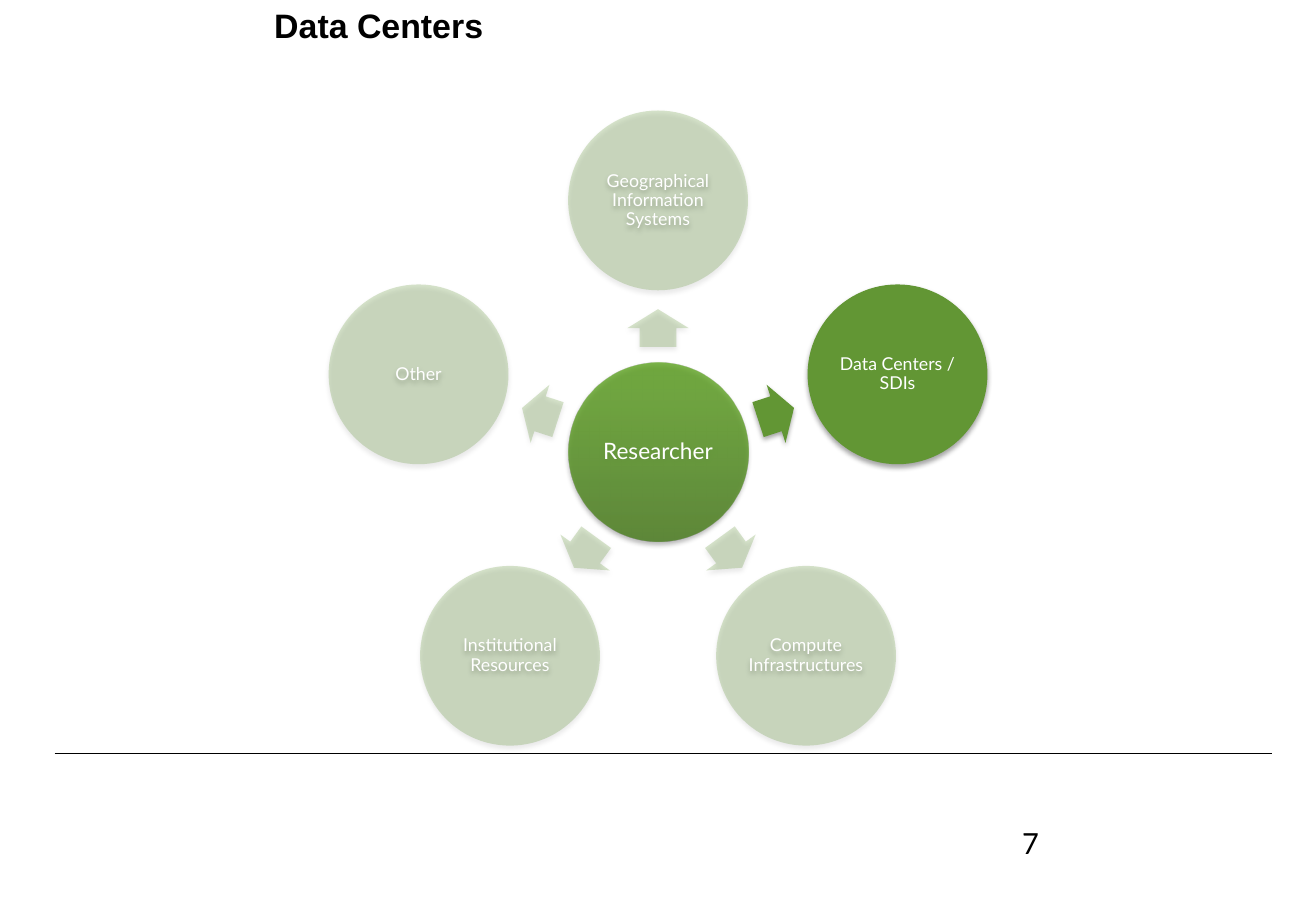
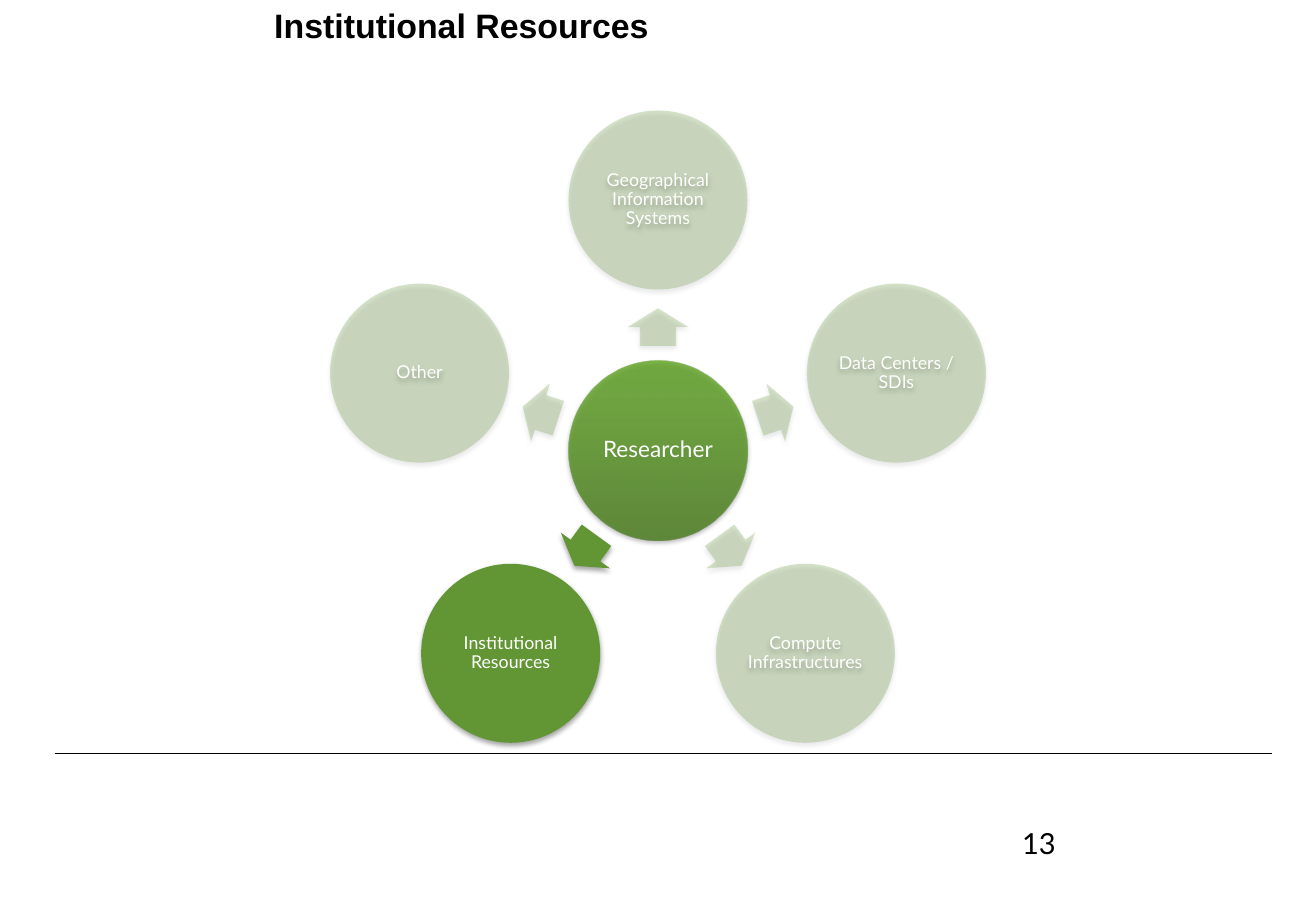
import math

from lxml import etree
from pptx import Presentation
from pptx import util as u
from pptx.dml.color import RGBColor
from pptx.enum import shapes, text
from pptx.oxml.ns import qn

COLORS = {
    "black": "000000", "white": "FFFFFF", "green": "629634",
    "hub dark": "487B1C", "hub mid": "5EA024", "hub light": "5EA322",
}
TOPICS = ["Geographical Information Systems", "Data Centers / SDIs",
          "Compute Infrastructures", "Institutional Resources", "Other"]
# title, page number, highlighted topic, circle diameter in points
PAGES = [
    ("Data Centers", "7", "Data Centers / SDIs", 111.5),
    ("Institutional Resources", "13", "Institutional Resources", 111),
]
CENTER_X, DIAGRAM_TOP = 407.9, 68.5
HUB_STOPS = [(0, "hub dark"), (80, "hub mid"), (100, "hub light")]


def write_text(shape, words, size, font="Lato", color="black", bold=False, align=None,
               anchor=text.MSO_ANCHOR.TOP, spacing=None, inset=(0, 0)):
    """Put one paragraph in a shape; inset is (horizontal, vertical) in points."""
    frame = shape.text_frame
    frame.word_wrap = True
    frame.vertical_anchor = anchor
    frame.margin_left = frame.margin_right = u.Pt(inset[0])
    frame.margin_top = frame.margin_bottom = u.Pt(inset[1])
    para = frame.paragraphs[0]
    para.alignment = align
    para.line_spacing = spacing
    span = para.add_run()
    span.text = words
    span.font.name, span.font.size, span.font.bold = font, u.Pt(size), bold
    span.font.color.rgb = RGBColor.from_string(COLORS[color])


def add_part(group, kind, x, y, width, height, opacity=100, stops=None):
    """Add a borderless, shadowed shape centred on (x, y)."""
    part = group.shapes.add_shape(kind, u.Pt(x - width / 2), u.Pt(y - height / 2),
                                  u.Pt(width), u.Pt(height))
    part.line.fill.background()
    properties = part.element.spPr
    if stops:
        part.fill.gradient()
        part.fill.gradient_angle = 90
        stop_list = properties.find(".//" + qn("a:gsLst"))
        for old_stop in list(stop_list):
            stop_list.remove(old_stop)
        for position, name in stops:
            stop = etree.SubElement(stop_list, qn("a:gs"), pos=str(position * 1000))
            etree.SubElement(stop, qn("a:srgbClr"), val=COLORS[name])
    else:
        part.fill.solid()
        part.fill.fore_color.rgb = RGBColor.from_string(COLORS["green"])
    if opacity < 100:
        for color in properties.iter(qn("a:srgbClr")):
            etree.SubElement(color, qn("a:alpha"), val=str(opacity * 1000))
    part.shadow.inherit = False
    shadow = etree.SubElement(properties.find(qn("a:effectLst")), qn("a:outerShdw"),
                              blurRad=str(u.Pt(3.1)), dist=str(u.Pt(1.8)),
                              dir="5400000", rotWithShape="0")
    shade = etree.SubElement(shadow, qn("a:srgbClr"), val=COLORS["black"])
    etree.SubElement(shade, qn("a:alpha"), val="35000")
    return part


deck = Presentation()
deck.slide_width, deck.slide_height = u.Pt(815.76), u.Pt(558.72)
circle_text = dict(color="white", align=text.PP_ALIGN.CENTER,
                   anchor=text.MSO_ANCHOR.MIDDLE, spacing=0.9, inset=(1.4, 1.4))
circle = shapes.MSO_SHAPE.OVAL

for title, number, highlight, diameter in PAGES:
    page = deck.slides.add_slide(deck.slide_layouts[6])

    rule = page.shapes.add_connector(shapes.MSO_CONNECTOR.STRAIGHT, u.Pt(33.9), u.Pt(467.2),
                                     u.Pt(788.4), u.Pt(467.2))
    rule.line.width = u.Pt(0.75)
    rule.line.color.rgb = RGBColor.from_string(COLORS["black"])
    etree.SubElement(rule.element.spPr, qn("a:effectLst"))

    diagram = page.shapes.add_group_shape()
    orbit = 1.4 * diameter
    center_y = DIAGRAM_TOP + diameter / 2 + orbit
    hub = add_part(diagram, circle, CENTER_X, center_y, diameter, diameter,
                   opacity=80, stops=HUB_STOPS)
    write_text(hub, "Researcher", 14, **circle_text)

    for index, topic in enumerate(TOPICS):
        degrees = 360 / len(TOPICS) * index - 90
        across, down = math.cos(math.radians(degrees)), math.sin(math.radians(degrees))
        opacity = 100 if topic == highlight else 25
        reach = 0.69 * diameter
        arrow = add_part(diagram, shapes.MSO_SHAPE.RIGHT_ARROW, CENTER_X + reach * across,
                         center_y + reach * down, 0.21 * diameter, 0.34 * diameter, opacity)
        arrow.adjustments[0], arrow.adjustments[1] = 0.6, 0.5
        arrow.rotation = degrees % 360
        node = add_part(diagram, circle, CENTER_X + orbit * across,
                        center_y + orbit * down, diameter, diameter, opacity)
        write_text(node, topic, 11, **circle_text)

    title_box = page.shapes.add_textbox(u.Pt(170), u.Pt(3.6), u.Pt(645.76), u.Pt(50.4))
    write_text(title_box, title, 21, font="Arial", bold=True, spacing=u.Pt(24.6))
    number_box = page.shapes.add_textbox(u.Pt(625.7), u.Pt(508.3), u.Pt(190), u.Pt(29.5))
    write_text(number_box, number, 18, inset=(7.9, 3.6))

deck.save("out.pptx")
